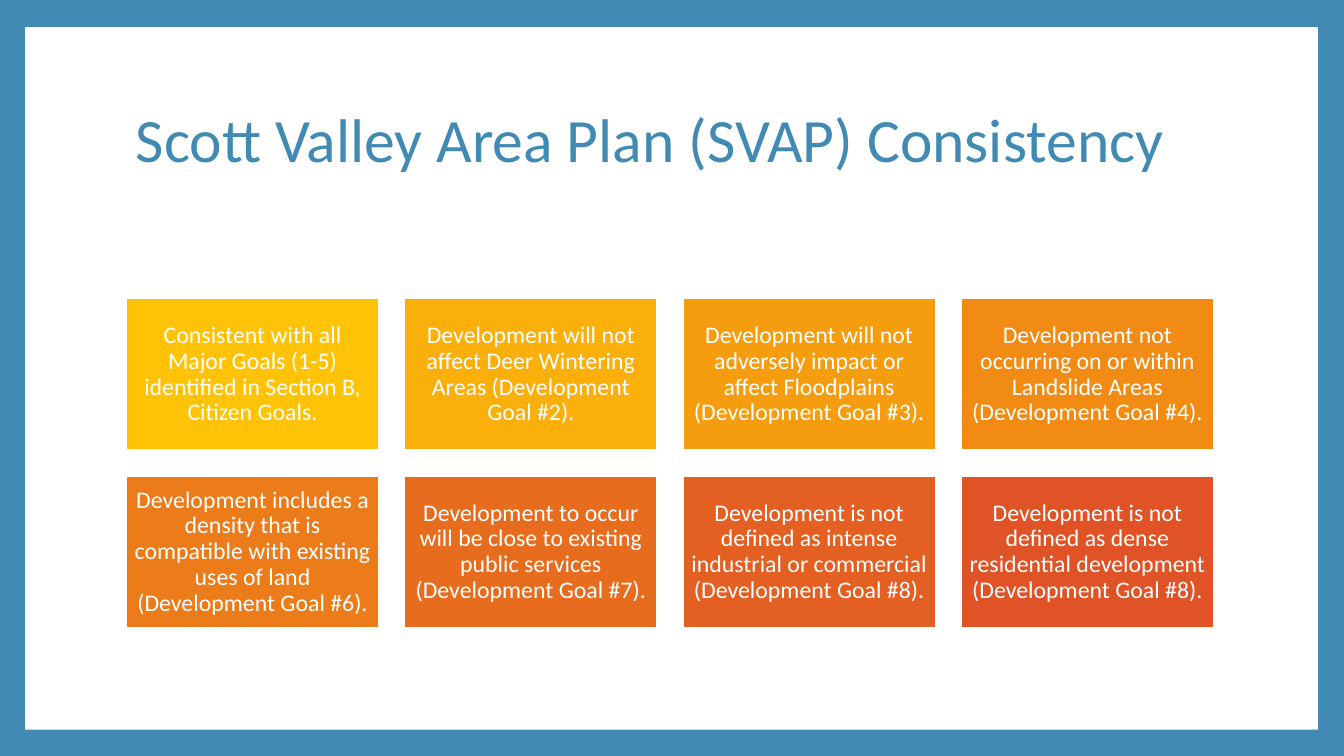
from dataclasses import dataclass

from pptx import Presentation
from pptx.dml.color import RGBColor
from pptx.enum.shapes import MSO_SHAPE as Kind
from pptx.enum.text import MSO_ANCHOR as Anchor, PP_ALIGN as Align
from pptx.shapes.autoshape import Shape
from pptx.slide import Slide
from pptx.util import Inches, Pt

BLUE = "418AB3"
WHITE = "FFFFFF"
LEFT, TOP = 1.25, 2.96
WIDTH, HEIGHT = 2.51, 1.51
GAP = 0.25
COLS = 4


@dataclass
class Card:
    fill: str
    text: str


CARDS = [
    Card("FEC306", "Consistent with all Major Goals (1-5) identified in Section B, Citizen Goals."),
    Card("FAAF0B", "Development will not affect Deer Wintering Areas (Development Goal #2)."),
    Card("F59C0F", "Development will not adversely impact or affect Floodplains (Development Goal #3)."),
    Card("F18B14", "Development not occurring on or within Landslide Areas (Development Goal #4)."),
    Card("EC7B19", "Development includes a density that is compatible with existing uses of land "
                   "(Development Goal #6)."),
    Card("E86C1E", "Development to occur will be close to existing public services (Development Goal #7)."),
    Card("E35F22", "Development is not defined as intense industrial or commercial (Development Goal #8)."),
    Card("DF5327", "Development is not defined as dense residential development (Development Goal #8)."),
]


def color(code: str) -> RGBColor:
    return RGBColor.from_string(code)


def add_rect(slide: Slide, left: float, top: float, width: float, height: float, fill: str) -> Shape:
    rect = slide.shapes.add_shape(
        Kind.RECTANGLE, Inches(left), Inches(top), Inches(width), Inches(height))
    rect.shadow.inherit = False
    rect.fill.solid()
    rect.fill.fore_color.rgb = color(fill)
    rect.line.fill.background()
    return rect


def write(shape: Shape, text: str, size: float, tint: str, align: Align, inset: float) -> None:
    frame = shape.text_frame
    frame.word_wrap = True
    frame.vertical_anchor = Anchor.MIDDLE
    frame.margin_left = frame.margin_right = Inches(inset)
    frame.margin_top = frame.margin_bottom = Inches(0.07)
    line = frame.paragraphs[0]
    line.text = text
    line.alignment = align
    line.line_spacing = 0.9
    line.font.name = "Calibri"
    line.font.size = Pt(size)
    line.font.color.rgb = color(tint)


def add_card(slide: Slide, card: Card, index: int) -> None:
    row, col = divmod(index, COLS)
    rect = add_rect(slide, LEFT + col * (WIDTH + GAP), TOP + row * (HEIGHT + GAP),
                    WIDTH, HEIGHT, card.fill)
    rect.line.color.rgb = color(WHITE)
    rect.line.width = Pt(1.5)
    write(rect, card.text, 17, WHITE, Align.CENTER, 0.07)


def main() -> None:
    deck = Presentation()
    deck.slide_width, deck.slide_height = Inches(13.33), Inches(7.5)
    slide = deck.slides.add_slide(deck.slide_layouts[6])
    slide.background.fill.solid()
    slide.background.fill.fore_color.rgb = color(BLUE)
    add_rect(slide, 0.25, 0.27, 12.82, 6.97, WHITE)
    title = slide.shapes.add_textbox(Inches(LEFT), Inches(0.67), Inches(10.8), Inches(1.48))
    write(title, "Scott Valley Area Plan (SVAP) Consistency", 44, BLUE, Align.LEFT, 0.1)
    for index, card in enumerate(CARDS):
        add_card(slide, card, index)
    deck.save("out.pptx")


if __name__ == "__main__":
    main()
